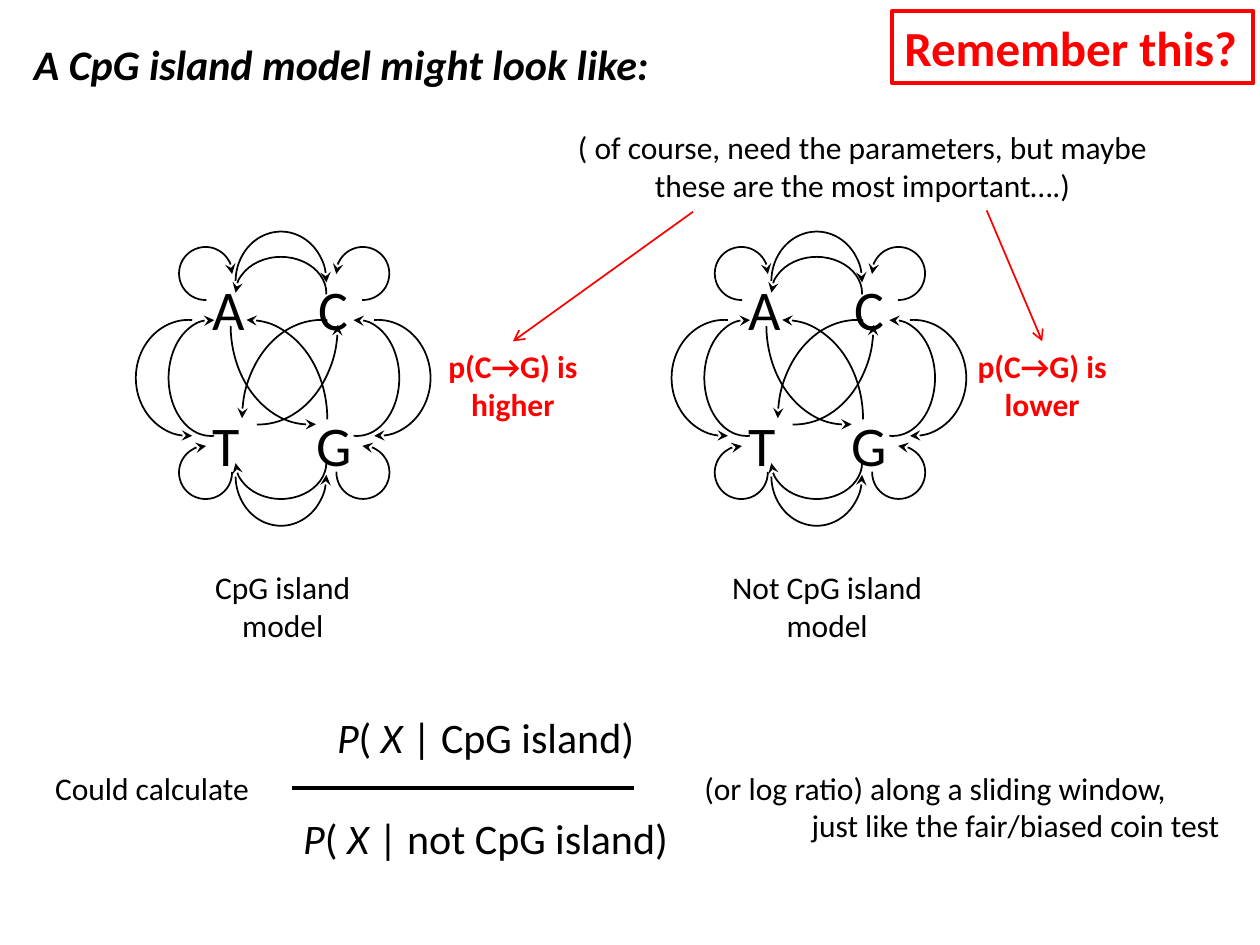
"""Build the slide that compares the CpG island model with its alternative."""
from dataclasses import dataclass
from typing import Any

from lxml.etree import SubElement
from pptx import Presentation
from pptx.dml.color import RGBColor
from pptx.enum.shapes import MSO_CONNECTOR, MSO_SHAPE
from pptx.enum.text import MSO_ANCHOR, PP_ALIGN
from pptx.oxml.ns import qn
from pptx.util import Cm, Pt

BLACK, RED = "000000", "FF0000"
MODEL_STEP = 10.8
TOP_HALF = (180.78, 1.35)
RIGHT_QUARTER = (269.16, 0)
LEFT_QUARTER = (180.78, 273.4)
LEFT_HALF = (86.48, 273.4)
SELF_LOOP = (88.48, 1.27)


@dataclass(frozen=True)
class Transition:
    box: tuple[float, float, float, float]
    sweep: tuple[float, float]
    arrow_end: str
    flip: str = ""
    rotation: int = 0


@dataclass(frozen=True)
class Label:
    lines: tuple[str, ...]
    box: tuple[float, float, float, float]
    size: int = 18
    color: str = BLACK
    bold: bool = False
    centered: bool = True
    wrap: bool = False
    gap: float = 0
    last_indent: float = 0


TRANSITIONS = (
    Transition((4.75, 4.67, 1.83, 2.01), TOP_HALF, "tail"),
    Transition((4.75, 5.18, 1.83, 1.47), TOP_HALF, "head"),
    Transition((4.75, 8.59, 1.83, 2.01), TOP_HALF, "tail", "V"),
    Transition((4.75, 8.59, 1.83, 1.47), TOP_HALF, "head", "V"),
    Transition((3.4, 6.45, 3.2, 4.01), RIGHT_QUARTER, "head"),
    Transition((4.88, 6.45, 3.2, 4.01), LEFT_QUARTER, "head"),
    Transition((3.61, 4.55, 3.2, 4.01), RIGHT_QUARTER, "tail", "V"),
    Transition((4.65, 4.55, 3.2, 4.01), LEFT_QUARTER, "tail", "V"),
    Transition((3.4, 6.45, 1.7, 2.34), LEFT_HALF, "head", "V"),
    Transition((2.74, 6.45, 2.13, 2.34), LEFT_HALF, "tail", "V"),
    Transition((6.35, 6.45, 1.7, 2.34), LEFT_HALF, "head", "HV"),
    Transition((6.55, 6.45, 2.13, 2.34), LEFT_HALF, "tail", "HV"),
    Transition((3.61, 4.98, 1.07, 1.07), SELF_LOOP, "tail"),
    Transition((3.61, 8.99, 1.07, 1.07), SELF_LOOP, "tail", "", 270),
    Transition((6.78, 4.98, 1.07, 1.07), SELF_LOOP, "tail", "H"),
    Transition((6.78, 8.99, 1.07, 1.07), SELF_LOOP, "tail", "V", 270),
)

HIGHER = Label(("p(C→G) is", "higher"), (8.74, 6.88, 3.2, 1.8), color=RED, bold=True)
LOWER = Label(("p(C→G) is", "lower"), (19.41, 6.88, 3.2, 1.8), color=RED, bold=True)
REMINDER = Label(("Remember this?",), (17.98, 0.23, 7.29, 1.45), 28, RED, True, False)
CAPTIONS = (
    Label(("CpG island", "model"), (4.06, 11.33, 3.28, 1.8)),
    Label(("Not CpG island", "model"), (14.48, 11.33, 4.39, 1.8)),
    Label(("( of course, need the parameters, but maybe these are the most important….)",),
          (11.28, 2.46, 12.22, 1.8), wrap=True),
    Label(("*P*( *X *| CpG island)", "*P*( *X *| not CpG island)"),
          (5.6, 14.22, 8.38, 3.33), 24, gap=29),
    Label(("Could calculate",), (0.86, 15.37, 4.6, 0.95), centered=False),
    Label(("(or log ratio) along a sliding window,", "just like the fair/biased coin test"),
          (13.95, 15.37, 11.2, 1.8), centered=False, wrap=True, last_indent=2.16),
)


def rgb(value: str) -> RGBColor:
    """Turn a hex string into a colour."""
    return RGBColor.from_string(value)


def apply(target: Any, formats: dict[str, Any]) -> None:
    """Set each named attribute on the target."""
    for name, value in formats.items():
        setattr(target, name, value)


def write(frame: Any, label: Label) -> None:
    """Fill a text frame; text between asterisks is italic."""
    apply(frame, {"word_wrap": label.wrap, "vertical_anchor": MSO_ANCHOR.TOP})
    for index, line in enumerate(label.lines):
        paragraph = frame.paragraphs[0] if index == 0 else frame.add_paragraph()
        paragraph.alignment = PP_ALIGN.CENTER if label.centered else PP_ALIGN.LEFT
        if index and label.gap:
            paragraph.space_before = Pt(label.gap)
        for part, text in enumerate(line.split("*")):
            if text:
                run = paragraph.add_run()
                run.text = text
                apply(run.font, {"name": "Calibri", "size": Pt(label.size),
                                 "bold": label.bold, "italic": part % 2 == 1})
                run.font.color.rgb = rgb(label.color)
    if label.last_indent:
        paragraph._p.get_or_add_pPr().set("marL", str(Cm(label.last_indent)))


def add_label(slide: Any, label: Label) -> Any:
    """Place a label as a text box."""
    box = slide.shapes.add_textbox(*map(Cm, label.box))
    write(box.text_frame, label)
    return box


def style_line(shape: Any, color: str, width: float, end: str = "", head: str = "") -> None:
    """Colour a line and give one end an arrowhead."""
    shape.line.color.rgb = rgb(color)
    shape.line.width = Pt(width)
    if end:
        outline = shape._element.spPr.find(qn("a:ln"))
        SubElement(outline, qn(f"a:{end}End"), type=head)


def add_transition(slide: Any, transition: Transition, shift: float) -> None:
    """Draw one curved transition of a model."""
    left, top, width, height = transition.box
    arc = slide.shapes.add_shape(
        MSO_SHAPE.ARC, Cm(left + shift), Cm(top), Cm(width), Cm(height))
    for index, angle in enumerate(transition.sweep):
        arc.adjustments[index] = angle * 0.6
    arc.rotation = transition.rotation
    for axis in transition.flip:
        arc._element.spPr.find(qn("a:xfrm")).set(f"flip{axis}", "1")
    arc.shadow.inherit = False
    arc.fill.background()
    style_line(arc, BLACK, 1, transition.arrow_end, "stealth")


def add_model(slide: Any, shift: float) -> None:
    """Draw the four bases and all transitions between them."""
    bases = add_label(slide, Label(("A\tC", "T\tG"), (4.04 + shift, 5.41, 3.6, 4.37),
                                   32, centered=False, wrap=True, gap=39))
    for paragraph in bases.text_frame.paragraphs:
        stops = SubElement(paragraph._p.get_or_add_pPr(), qn("a:tabLst"))
        SubElement(stops, qn("a:tab"), pos=str(Cm(2.44)), algn="ctr")
    for transition in TRANSITIONS:
        add_transition(slide, transition, shift)


def add_line(slide: Any, start: tuple[float, float], end: tuple[float, float],
             color: str, width: float, target: Any = None) -> None:
    """Draw a line, with an arrow to the target's top if there is one."""
    line = slide.shapes.add_connector(MSO_CONNECTOR.STRAIGHT, *map(Cm, start + end))
    style_line(line, color, width, "tail" if target else "", "arrow")
    SubElement(line._element.spPr, qn("a:effectLst"))
    if target:
        line.end_connect(target, 0)


def main() -> None:
    """Build and save the slide."""
    deck = Presentation()
    apply(deck, {"slide_width": Cm(25.4), "slide_height": Cm(19.05)})
    slide = deck.slides.add_slide(deck.slide_layouts[5])

    title = slide.shapes.title
    heading = Label(("*A CpG island model might look like:*",), (0.43, 0.64, 24.33, 2.31),
                    24, bold=True, centered=False, wrap=True)
    apply(title, dict(zip(("left", "top", "width", "height"), map(Cm, heading.box))))
    write(title.text_frame, heading)

    for model in range(2):
        add_model(slide, model * MODEL_STEP)
    for caption in CAPTIONS:
        add_label(slide, caption)
    add_line(slide, (5.89, 15.88), (12.78, 15.88), BLACK, 2)
    for start, label in (((13.97, 4.27), HIGHER), ((19.89, 4.24), LOWER)):
        left, top, width, _ = label.box
        add_line(slide, start, (left + width / 2, top), RED, 1, add_label(slide, label))

    reminder = slide.shapes.add_shape(MSO_SHAPE.RECTANGLE, *map(Cm, REMINDER.box))
    reminder.shadow.inherit = False
    reminder.fill.background()
    style_line(reminder, RED, 2.25)
    write(reminder.text_frame, REMINDER)
    deck.save("out.pptx")


if __name__ == "__main__":
    main()
